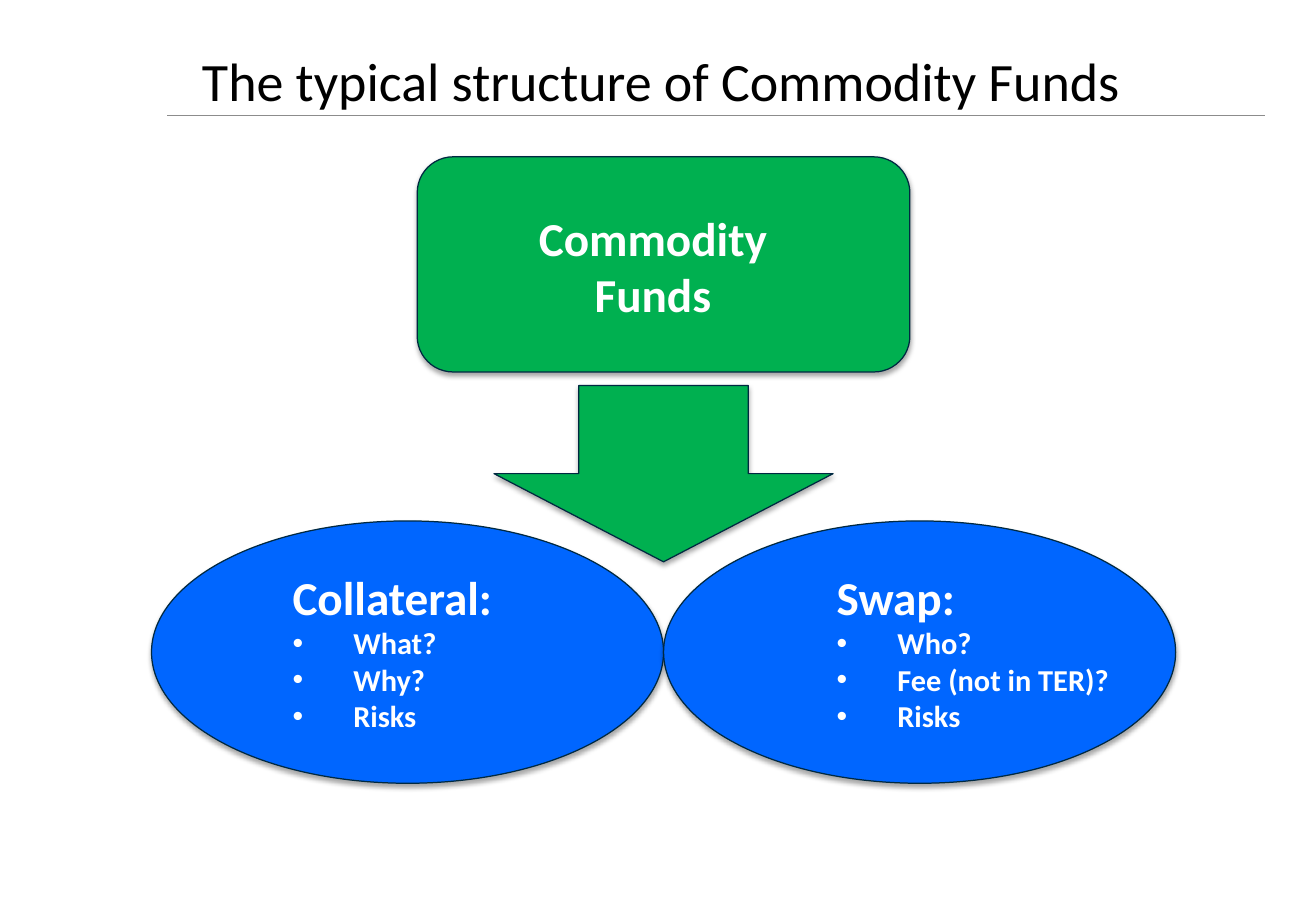
from lxml import etree
from pptx import Presentation
from pptx.dml.color import RGBColor
from pptx.enum import shapes, text
from pptx.oxml import ns
from pptx.util import Pt

COLOURS = {"black": "000000", "white": "FFFFFF", "green": "00B050",
           "blue": "0066FF", "outline": "002941", "rule": "8C8C8C"}
HEADING = {"name": "Calibri", "size": Pt(28), "bold": True}
BULLET = {**HEADING, "size": Pt(18)}
TITLE = {"name": "Calibri", "size": Pt(32), "bold": False}


def colour(name):
    return RGBColor.from_string(COLOURS[name])


def add_element(parent, tag, **attributes):
    return etree.SubElement(parent, ns.qn(tag), attributes)


def format_font(font, values, colour_name):
    for name, value in values.items():
        setattr(font, name, value)
    font.color.rgb = colour(colour_name)


def add_block(slide, kind, box, fill):
    """Outlined shape with a soft shadow below it."""
    shape = slide.shapes.add_shape(kind, *map(Pt, box))
    shape.fill.solid()
    shape.fill.fore_color.rgb = colour(fill)
    shape.line.color.rgb = colour("outline")
    shape.line.width = Pt(0.75)
    shape.shadow.inherit = False
    effects = shape._element.spPr.find(ns.qn("a:effectLst"))
    shadow = add_element(effects, "a:outerShdw", blurRad=str(Pt(3.1)), dist=str(Pt(1.8)),
                         dir="5400000", rotWithShape="0")
    shade = add_element(shadow, "a:srgbClr", val=COLOURS["black"])
    add_element(shade, "a:alpha", val="35000")


def add_label(slide, box, lines, alignment, bulleted=False):
    """Text box whose lines after the first may be bullets."""
    frame = slide.shapes.add_textbox(*map(Pt, box)).text_frame
    frame.word_wrap = True
    for index, line in enumerate(lines):
        paragraph = frame.paragraphs[0] if index == 0 else frame.add_paragraph()
        paragraph.alignment = alignment
        is_bullet = bulleted and index > 0
        if is_bullet:
            properties = paragraph._p.get_or_add_pPr()
            properties.set("marL", str(Pt(36)))
            properties.set("indent", str(-Pt(36)))
            add_element(properties, "a:buFont", typeface="Arial")
            add_element(properties, "a:buChar", char="•")
        run = paragraph.add_run()
        run.text = line
        format_font(run.font, BULLET if is_bullet else HEADING, "white")


def add_title(slide, box, title):
    left, top, width, height = box
    # Title text
    shape = slide.shapes.title
    shape.left, shape.top, shape.width, shape.height = map(Pt, box)
    frame = shape.text_frame
    frame.text = title
    frame.vertical_anchor = text.MSO_ANCHOR.MIDDLE
    paragraph = frame.paragraphs[0]
    paragraph.alignment = text.PP_ALIGN.LEFT
    format_font(paragraph.runs[0].font, TITLE, "black")
    # Rule under the title
    rule_left, rule_top = left - 13.5, top + 47.5
    rule = slide.shapes.add_connector(shapes.MSO_CONNECTOR.STRAIGHT, Pt(rule_left), Pt(rule_top),
                                      Pt(rule_left + 651), Pt(rule_top))
    rule.line.color.rgb = colour("rule")
    rule.line.width = Pt(0.5)
    add_element(rule._element.spPr, "a:effectLst")


def add_fund(slide, box):
    left, top, width, height = box
    # Arrow pointing down to the components
    arrow_width = 201
    add_block(slide, shapes.MSO_SHAPE.DOWN_ARROW,
              (left + (width - arrow_width) / 2, top + height + 8, arrow_width, 104.5), "green")
    # Fund box and its label
    add_block(slide, shapes.MSO_SHAPE.ROUNDED_RECTANGLE, box, "green")
    add_label(slide, (left + 53.3, top + 27.4, 172.8, 75), ("Commodity", "Funds"),
              text.PP_ALIGN.CENTER)


def add_component(slide, box, lines, text_inset):
    left, top, width, height = box
    add_block(slide, shapes.MSO_SHAPE.OVAL, box, "blue")
    add_label(slide, (left + text_inset, top + 24.2, 190, 106.5), lines,
              text.PP_ALIGN.LEFT, bulleted=True)


def main():
    presentation = Presentation()
    presentation.slide_width, presentation.slide_height = Pt(780), Pt(540)
    slide = presentation.slides.add_slide(presentation.slide_layouts[5])

    add_title(slide, (112.5, 21, 609, 53), "The typical structure of Commodity Funds")

    # Components side by side, below the fund
    components = ((("Collateral:", "What?", "Why?", "Risks"), 76.5),
                  (("Swap:", "Who?", "Fee (not in TER)?", "Risks"), 95.5))
    left, width = 89.8, 303.5
    add_fund(slide, (left + width - 146, 93, 292, 127.5))
    for index, (lines, text_inset) in enumerate(components):
        add_component(slide, (left + index * width, 308.8, width, 155.5), lines, text_inset)

    presentation.save("out.pptx")


if __name__ == "__main__":
    main()
